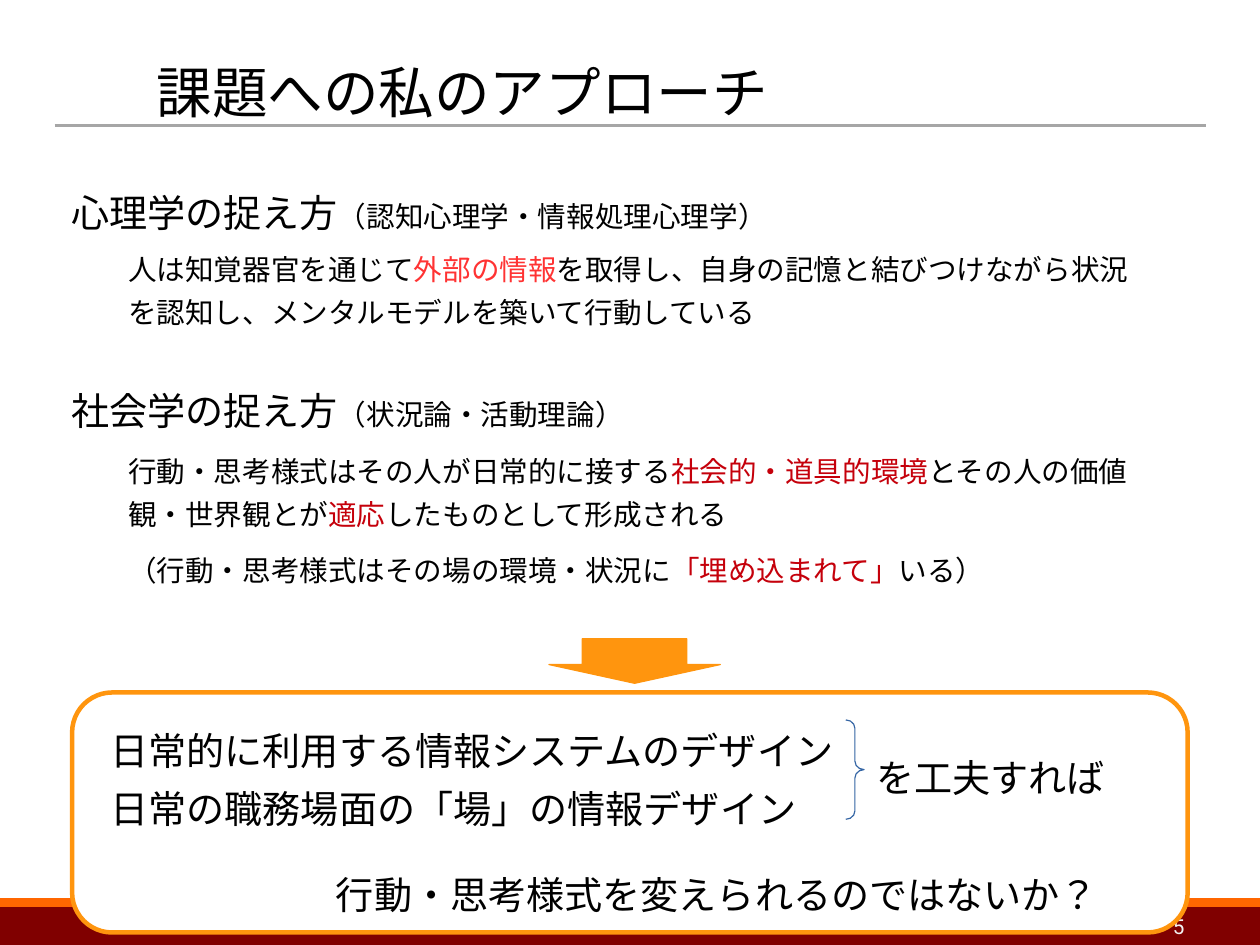
from dataclasses import dataclass

from lxml import etree
from pptx import Presentation
from pptx.dml.color import RGBColor
from pptx.enum.lang import MSO_LANGUAGE_ID
from pptx.enum.shapes import MSO_CONNECTOR, MSO_SHAPE
from pptx.enum.text import MSO_ANCHOR, PP_ALIGN
from pptx.oxml.ns import qn
from pptx.util import Cm, Inches, Pt

JAPANESE = MSO_LANGUAGE_ID.JAPANESE
STRAIGHT = MSO_CONNECTOR.STRAIGHT
RECTANGLE = MSO_SHAPE.RECTANGLE
ROUNDED = MSO_SHAPE.ROUNDED_RECTANGLE
DOWN_ARROW = MSO_SHAPE.DOWN_ARROW
RIGHT_BRACE = MSO_SHAPE.RIGHT_BRACE
TOP, MIDDLE = MSO_ANCHOR.TOP, MSO_ANCHOR.MIDDLE
LEFT, RIGHT = PP_ALIGN.LEFT, PP_ALIGN.RIGHT

BLACK = RGBColor(0x00, 0x00, 0x00)
WHITE = RGBColor(0xFF, 0xFF, 0xFF)
PALE = RGBColor(0xF2, 0xF2, 0xF2)
GRAY = RGBColor(0xA6, 0xA6, 0xA6)
MAROON = RGBColor(0x80, 0x00, 0x00)
BAND_ORANGE = RGBColor(0xFF, 0x66, 0x00)
ORANGE = RGBColor(0xFF, 0x95, 0x0E)
BLUE = RGBColor(0x34, 0x65, 0xA4)
BRIGHT_RED = RGBColor(0xFF, 0x33, 0x33)
DEEP_RED = RGBColor(0xC5, 0x00, 0x0B)

LATIN_FONT = "Roboto"
JAPANESE_FONT = "Noto Sans CJK JP"
HEADING_SIZE, BODY_SIZE = 24, 18

SLIDE_WIDTH, SLIDE_HEIGHT = Cm(28), Cm(21)
COLUMN, ROW = SLIDE_WIDTH / 100, SLIDE_HEIGHT / 100


@dataclass(frozen=True)
class Area:
    column: float
    row: float
    columns: float
    rows: float

    def lengths(self) -> tuple[int, int, int, int]:
        return (round(self.column * COLUMN), round(self.row * ROW),
                round(self.columns * COLUMN), round(self.rows * ROW))


@dataclass(frozen=True)
class Run:
    text: str
    color: RGBColor = BLACK
    size: float | None = None


@dataclass(frozen=True)
class Section:
    heading: str
    theory: str
    heading_row: float
    heading_columns: float
    body_row: float
    paragraphs: list[list[Run]]


SECTIONS = [
    Section("社会学の捉え方", "（状況論・活動理論）", 38.57, 52.9, 46.52, [
        [Run("行動・思考様式はその人が日常的に接する"),
         Run("社会的・道具的環境", DEEP_RED),
         Run("とその人の価値観・世界観とが"),
         Run("適応", DEEP_RED),
         Run("したものとして形成される")],
        [Run("（行動・思考様式はその場の環境・状況に"),
         Run("「埋め込まれて」", DEEP_RED),
         Run("いる）")],
    ]),
    Section("心理学の捉え方", "（認知心理学・情報処理心理学）", 17.65, 67.15, 25.13, [
        [Run("人は知覚器官を通じて"),
         Run("外部の情報", BRIGHT_RED),
         Run("を取得し、自身の記憶と結びつけながら状況を認知し、"
             "メンタルモデルを築いて行動している")],
    ]),
]

PROPOSALS = [
    (Area(7.87, 75.21, 59.26, 13.3),
     [[Run("日常的に利用する情報システムのデザイン")],
      [Run("日常の職務場面の「場」の情報デザイン")]]),
    (Area(25.77, 90.45, 64.79, 7.26),
     [[Run("行動・思考様式を変えられるのではないか？")]]),
    (Area(68.65, 77.97, 19.96, 7.26), [[Run("を工夫すれば")]]),
]


def add_figure(slide, kind, area: Area, *, fill: RGBColor | None = None,
               line: RGBColor | None = None, width: float = 0.75,
               adjustments: tuple[float, ...] = ()):
    shape = slide.shapes.add_shape(kind, *area.lengths())
    shape.shadow.inherit = False
    for index, value in enumerate(adjustments):
        shape.adjustments[index] = value
    if fill is None:
        shape.fill.background()
    else:
        shape.fill.solid()
        shape.fill.fore_color.rgb = fill
    if line is None:
        shape.line.fill.background()
    else:
        shape.line.color.rgb = line
        shape.line.width = Pt(width)
    return shape


def write_text(shape, paragraphs: list[list[Run]], *, size: float,
               font: str = JAPANESE_FONT, anchor=TOP, align=LEFT,
               insets: tuple[float, float] = (0.1, 0.05),
               line_spacing: float = 1.25, space_before: float = 0) -> None:
    frame = shape.text_frame
    frame.word_wrap = True
    frame.vertical_anchor = anchor
    frame.margin_left = frame.margin_right = Inches(insets[0])
    frame.margin_top = frame.margin_bottom = Inches(insets[1])
    for index, runs in enumerate(paragraphs):
        paragraph = frame.add_paragraph() if index else frame.paragraphs[0]
        paragraph.alignment = align
        paragraph.line_spacing = line_spacing
        paragraph.space_before = Pt(space_before if index else 0)
        for item in runs:
            run = paragraph.add_run()
            run.text = item.text
            run.font.size = Pt(item.size or size)
            run.font.color.rgb = item.color
            run.font.name = font
            run.font.language_id = JAPANESE
            east_asian = etree.SubElement(run.font._element, qn("a:ea"))
            east_asian.set("typeface", JAPANESE_FONT)


def add_text(slide, area: Area, paragraphs: list[list[Run]], **text_format) -> None:
    write_text(slide.shapes.add_textbox(*area.lengths()), paragraphs, **text_format)


def add_frame(slide) -> None:
    add_figure(slide, RECTANGLE, Area(0, 95.16, 100, 1.09),
               fill=BAND_ORANGE, line=BAND_ORANGE, width=2)
    add_figure(slide, RECTANGLE, Area(0, 96.19, 100, 3.75),
               fill=MAROON, line=MAROON, width=2)
    left, top, width, _ = Area(4.33, 13.27, 91.37, 0).lengths()
    rule = slide.shapes.add_connector(STRAIGHT, left, top, left + width, top)
    rule.line.color.rgb = GRAY
    rule.line.width = Pt(1.5)
    etree.SubElement(rule._element.spPr, qn("a:effectLst"))
    label = {"font": LATIN_FONT, "anchor": MIDDLE, "insets": (0.11, 0.06),
             "line_spacing": 1}
    add_text(slide, Area(71.67, 96.15, 23.32, 3.75), [[Run("5", PALE)]],
             size=13, align=RIGHT, **label)
    add_text(slide, Area(11.43, 3.99, 83.55, 11.37),
             [[Run("課題への私のアプローチ")]], size=35, **label)


def add_section(slide, section: Section) -> None:
    heading = add_figure(
        slide, ROUNDED, Area(4.26, section.heading_row, section.heading_columns, 8.46),
        fill=WHITE)
    write_text(heading, [[Run(section.heading), Run(section.theory, size=BODY_SIZE)]],
               size=HEADING_SIZE, anchor=MIDDLE, insets=(0.12, 0.07))
    add_text(slide, Area(9.28, section.body_row, 82.19, 18.74), section.paragraphs,
             size=BODY_SIZE, space_before=8.5)


def add_conclusion(slide) -> None:
    add_figure(slide, ROUNDED, Area(5.72, 73.28, 88.54, 25.4),
               fill=WHITE, line=ORANGE, width=2.83)
    add_figure(slide, DOWN_ARROW, Area(43.56, 67.59, 13.61, 4.72),
               fill=ORANGE, line=ORANGE, adjustments=(0.61, 0.42))
    for area, paragraphs in PROPOSALS:
        add_text(slide, area, paragraphs, size=HEADING_SIZE)
    add_figure(slide, RIGHT_BRACE, Area(67.13, 76.18, 1.45, 10.52),
               line=BLUE, adjustments=(0.46, 0.5))


def main() -> None:
    presentation = Presentation()
    presentation.slide_width, presentation.slide_height = SLIDE_WIDTH, SLIDE_HEIGHT
    slide = presentation.slides.add_slide(presentation.slide_layouts[6])
    add_frame(slide)
    for section in SECTIONS:
        add_section(slide, section)
    add_conclusion(slide)
    presentation.save("out.pptx")


if __name__ == "__main__":
    main()
